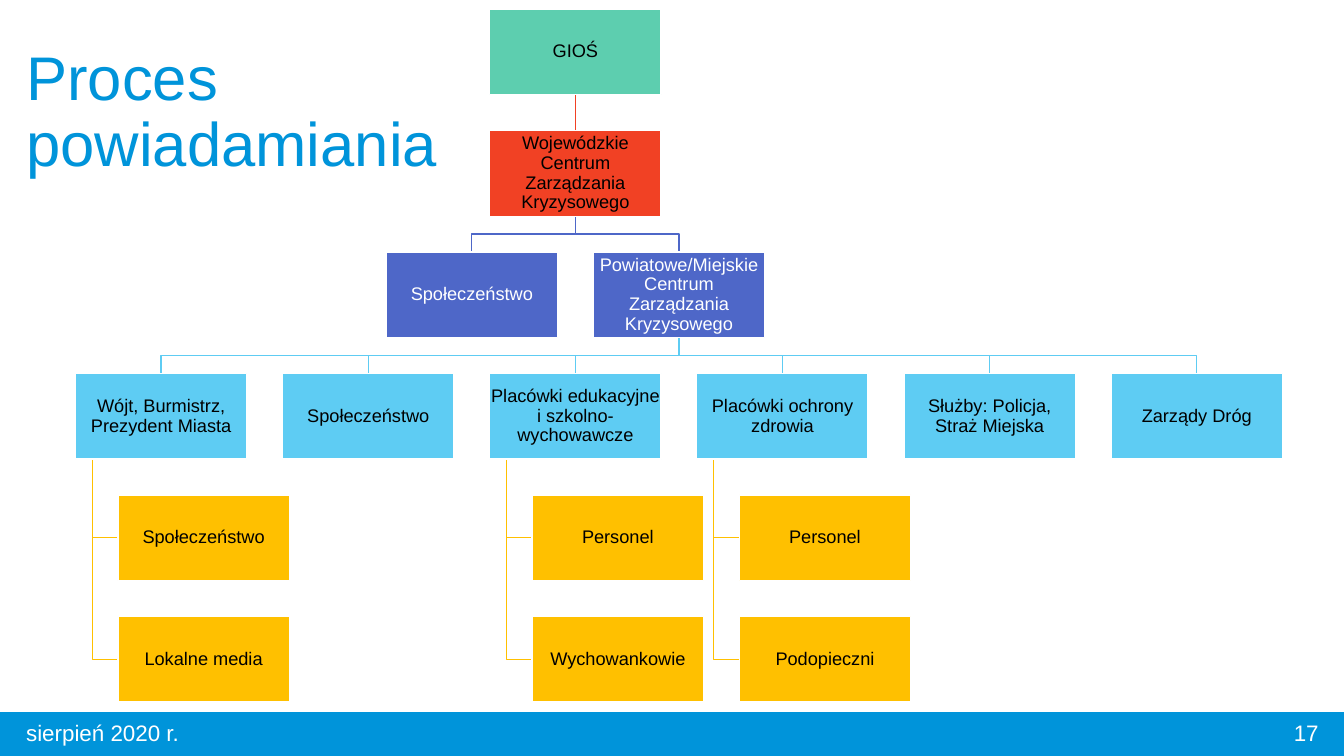
from dataclasses import dataclass

import pptx
import pptx.dml.color
import pptx.enum.shapes
import pptx.enum.text
import pptx.oxml.ns
import pptx.util
from lxml import etree

Cm = pptx.util.Cm
Pt = pptx.util.Pt
ALIGN = pptx.enum.text.PP_ALIGN
MIDDLE = pptx.enum.text.MSO_ANCHOR.MIDDLE
RECT = pptx.enum.shapes.MSO_SHAPE.RECTANGLE


@dataclass(frozen=True)
class Theme:
    font: str = "Arial"
    accent: str = "0094DA"
    white: str = "FFFFFF"
    black: str = "000000"
    levels: tuple = ("5DCEAF", "F14124", "4E67C8", "5ECCF3", "FFC000")
    title_size: int = 44
    box_size: int = 13
    footer_size: int = 16


@dataclass(frozen=True)
class Unit:
    label: str
    column: float
    level: int
    children: tuple = ()


THEME = Theme()
SLIDE_W, SLIDE_H = 33.87, 19.05
LEFT, TOP = 1.9, 0.23
COLUMN_STEP, ROW_STEP = 5.22, 3.06
BOX_W, BOX_H = 4.32, 2.16
TRUNK_INDENT, LEAF_INDENT = 0.43, 1.07
LEAF_LEVEL = 4
DARK_LEVEL = 2
BAR_TOP = 17.95


def leaves(column, *labels):
    """Units stacked one below another under a column."""
    return tuple(Unit(label, column, LEAF_LEVEL + i) for i, label in enumerate(labels))


LOCAL_UNITS = (
    Unit("Wójt, Burmistrz, Prezydent Miasta", 0, 3, leaves(0, "Społeczeństwo", "Lokalne media")),
    Unit("Społeczeństwo", 1, 3),
    Unit("Placówki edukacyjne i szkolno-wychowawcze", 2, 3, leaves(2, "Personel", "Wychowankowie")),
    Unit("Placówki ochrony zdrowia", 3, 3, leaves(3, "Personel", "Podopieczni")),
    Unit("Służby: Policja, Straż Miejska", 4, 3),
    Unit("Zarządy Dróg", 5, 3),
)
ORGANISATION = Unit("GIOŚ", 2, 0, (
    Unit("Wojewódzkie Centrum Zarządzania Kryzysowego", 2, 1, (
        Unit("Społeczeństwo", 1.5, 2),
        Unit("Powiatowe/Miejskie Centrum Zarządzania Kryzysowego", 2.5, 2, LOCAL_UNITS),
    )),
))


def rgb(value):
    return pptx.dml.color.RGBColor.from_string(value)


def level_colour(unit):
    return THEME.levels[min(unit.level, LEAF_LEVEL)]


def corner(unit):
    """Left and top of a unit's box, in centimetres."""
    indent = LEAF_INDENT if unit.level >= LEAF_LEVEL else 0
    return LEFT + unit.column * COLUMN_STEP + indent, TOP + unit.level * ROW_STEP


def format_paragraph(p, size, colour, align, spacing=None):
    p.alignment = align
    p.line_spacing = spacing
    p.font.name = THEME.font
    p.font.size = Pt(size)
    p.font.color.rgb = rgb(colour)


def add_rectangle(slide, x, y, w, h, fill, line):
    sp = slide.shapes.add_shape(RECT, Cm(x), Cm(y), Cm(w), Cm(h))
    sp.shadow.inherit = False
    sp.fill.solid()
    sp.fill.fore_color.rgb = rgb(fill)
    sp.line.color.rgb = rgb(line)
    sp.line.width = Pt(1)
    return sp


def add_title(slide, text):
    sp = slide.shapes.title
    sp.left, sp.top, sp.width, sp.height = Cm(0.41), Cm(1.02), Cm(25.45), Cm(3.68)
    tf = sp.text_frame
    tf.text = text
    tf.auto_size = pptx.enum.text.MSO_AUTO_SIZE.NONE
    tf.vertical_anchor = MIDDLE
    format_paragraph(tf.paragraphs[0], THEME.title_size, THEME.accent, ALIGN.LEFT, 0.9)


def add_unit_box(slide, unit):
    sp = add_rectangle(slide, *corner(unit), BOX_W, BOX_H, level_colour(unit), THEME.white)
    tf = sp.text_frame
    tf.text = unit.label
    tf.word_wrap = True
    tf.vertical_anchor = MIDDLE
    tf.margin_left = tf.margin_right = tf.margin_top = tf.margin_bottom = Cm(0.02)
    colour = THEME.white if unit.level == DARK_LEVEL else THEME.black
    format_paragraph(tf.paragraphs[0], THEME.box_size, colour, ALIGN.CENTER, 0.9)


def link_points(parent, child):
    """Corners of the line from a parent's box down to a child's box."""
    px, py = corner(parent)
    cx, cy = corner(child)
    start_y = py + BOX_H
    if child.level >= LEAF_LEVEL:
        trunk, middle = px + TRUNK_INDENT, cy + BOX_H / 2
        return [(trunk, start_y), (trunk, middle), (cx, middle)]
    start_x, end_x = px + BOX_W / 2, cx + BOX_W / 2
    if start_x == end_x:
        return [(start_x, start_y), (end_x, cy)]
    turn = (start_y + cy) / 2
    return [(start_x, start_y), (start_x, turn), (end_x, turn), (end_x, cy)]


def add_link(slide, parent, child):
    points = [(Cm(x), Cm(y)) for x, y in link_points(parent, child)]
    if len(points) == 2:
        straight = pptx.enum.shapes.MSO_CONNECTOR.STRAIGHT
        sp = slide.shapes.add_connector(straight, *points[0], *points[1])
    else:
        builder = slide.shapes.build_freeform(*points[0])
        builder.add_line_segments(points[1:], close=False)
        sp = builder.convert_to_shape()
        sp.fill.background()
    sp.line.color.rgb = rgb(level_colour(child))
    sp.line.width = Pt(0.5 if child.level >= LEAF_LEVEL else 1)
    etree.SubElement(sp.element.spPr, pptx.oxml.ns.qn("a:effectLst"))


def add_links(slide, unit):
    for child in unit.children:
        add_link(slide, unit, child)
        add_links(slide, child)


def add_boxes(slide, unit):
    add_unit_box(slide, unit)
    for child in unit.children:
        add_boxes(slide, child)


def add_footer_text(slide, text, x, w, align):
    tf = slide.shapes.add_textbox(Cm(x), Cm(BAR_TOP), Cm(w), Cm(1.02)).text_frame
    tf.text = text
    tf.word_wrap = True
    tf.vertical_anchor = MIDDLE
    format_paragraph(tf.paragraphs[0], THEME.footer_size, THEME.white, align)


def main():
    prs = pptx.Presentation()
    prs.slide_width, prs.slide_height = Cm(SLIDE_W), Cm(SLIDE_H)
    slide = prs.slides.add_slide(prs.slide_layouts[5])
    add_title(slide, "Proces\vpowiadamiania")
    add_rectangle(slide, 0, BAR_TOP, SLIDE_W, SLIDE_H - BAR_TOP, THEME.accent, THEME.accent)
    add_links(slide, ORGANISATION)
    add_boxes(slide, ORGANISATION)
    add_footer_text(slide, "sierpień 2020 r.", 0.41, 10.16, ALIGN.LEFT)
    add_footer_text(slide, "17", 25.86, 7.62, ALIGN.RIGHT)
    prs.save("out.pptx")


if __name__ == "__main__":
    main()
